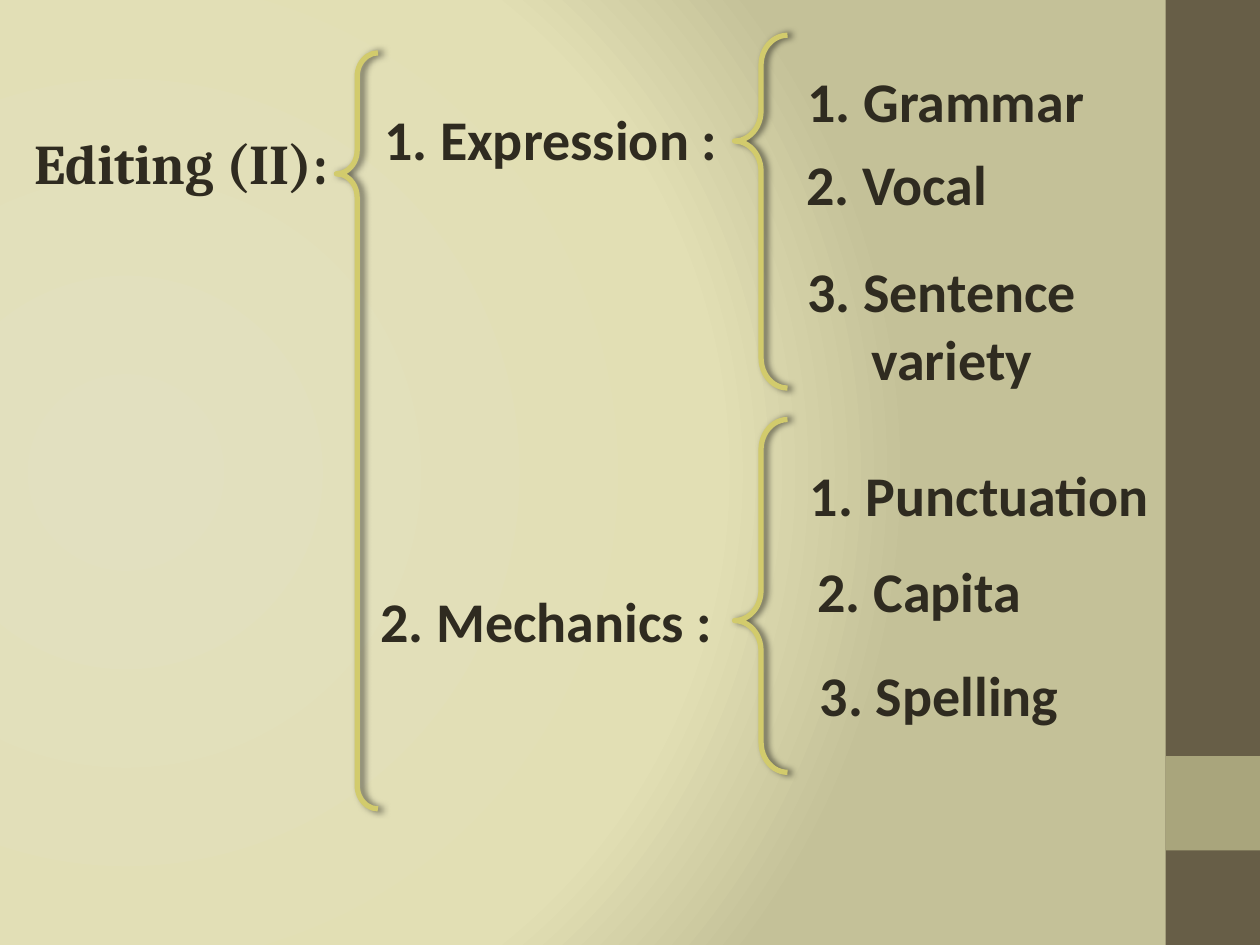
import pptx
import pptx.dml.color
import pptx.enum.shapes
import pptx.enum.text
import pptx.oxml
import pptx.oxml.ns
import pptx.util

RGBColor = pptx.dml.color.RGBColor
INK = RGBColor(0x2F, 0x2B, 0x20)
BRACE = RGBColor(0xD2, 0xCB, 0x6C)
SIDEBAR = RGBColor(0x67, 0x5E, 0x47)
ACCENT = RGBColor(0xA9, 0xA5, 0x7C)
GLOW = ((0, RGBColor(0xE2, 0xE0, 0xC0)),
        (75, RGBColor(0xE2, 0xDF, 0xB4)),
        (100, RGBColor(0xC4, 0xC1, 0x98)))
COLUMNS, ROWS = 40, 30
LINE_ROWS = 2.56  # height of a one-line text box


class Page:
    """The slide and its style; lengths are columns and rows of the grid."""

    def __init__(self, deck):
        self.deck = deck
        self.slide = deck.slides.add_slide(deck.slide_layouts[5])
        self.shapes = self.slide.shapes

    def place(self, left, top, width, height):
        column = self.deck.slide_width / COLUMNS
        row = self.deck.slide_height / ROWS
        return [pptx.util.Emu(round(length)) for length in
                (left * column, top * row, width * column, height * row)]

    def background(self, stops):
        """Fill the background with a round gradient centred at the left."""
        marks = "".join(f'<a:gs pos="{share * 1000}"><a:srgbClr val="{color}"/></a:gs>'
                        for share, color in stops)
        self.slide.background.fill.solid()
        properties = self.slide.background._cSld.bg.bgPr
        solid = properties.find(pptx.oxml.ns.qn("a:solidFill"))
        properties.replace(solid, pptx.oxml.parse_xml(
            f'<a:gradFill {pptx.oxml.ns.nsdecls("a")} rotWithShape="1">'
            f'<a:gsLst>{marks}</a:gsLst><a:path path="circle">'
            '<a:fillToRect l="20000" t="50000" r="100000" b="50000"/>'
            '</a:path></a:gradFill>'))

    def block(self, area, color):
        shape = self.shapes.add_shape(
            pptx.enum.shapes.MSO_SHAPE.RECTANGLE, *self.place(*area))
        shape.shadow.inherit = False
        shape.fill.solid()
        shape.fill.fore_color.rgb = color
        shape.line.fill.background()

    def set_lines(self, box, lines, font):
        frame = box.text_frame
        frame.word_wrap = True
        frame.auto_size = pptx.enum.text.MSO_AUTO_SIZE.NONE
        frame.vertical_anchor = pptx.enum.text.MSO_ANCHOR.TOP
        frame.text = "\n".join(lines)
        for para in frame.paragraphs:
            para.alignment = pptx.enum.text.PP_ALIGN.LEFT
            para.font.name = font
            para.font.size = pptx.util.Pt(32)
            para.font.bold = True
            para.font.color.rgb = INK
        for para in frame.paragraphs[1:]:
            para._p.get_or_add_pPr().set("marL", str(pptx.util.Inches(0.51)))

    def title(self, area, text):
        box = self.shapes.title
        box.left, box.top, box.width, box.height = self.place(*area)
        self.set_lines(box, [text], "Cambria")

    def text(self, left, top, width, *lines):
        area = self.place(left, top, width, LINE_ROWS * len(lines))
        self.set_lines(self.shapes.add_textbox(*area), lines, "Calibri")

    def brace(self, area, point):
        """Draw a left brace whose tip is at the given share of its height."""
        shape = self.shapes.add_shape(
            pptx.enum.shapes.MSO_SHAPE.LEFT_BRACE, *self.place(*area))
        shape.adjustments[0] = 0.57
        shape.adjustments[1] = point
        shape.fill.background()
        shape.line.color.rgb = BRACE
        shape.line.width = pptx.util.Pt(3)
        shape.shadow.inherit = False
        effects = shape._element.spPr.find(pptx.oxml.ns.qn("a:effectLst"))
        effects.append(pptx.oxml.parse_xml(
            f'<a:outerShdw {pptx.oxml.ns.nsdecls("a")} dir="0"'
            f' blurRad="{pptx.util.Pt(4)}" dist="{pptx.util.Pt(2)}" rotWithShape="0">'
            '<a:srgbClr val="000000"><a:alpha val="60000"/></a:srgbClr>'
            '</a:outerShdw>'))


def main():
    deck = pptx.Presentation()
    deck.slide_width = pptx.util.Inches(10)
    deck.slide_height = pptx.util.Inches(7.5)
    page = Page(deck)

    page.background(GLOW)
    page.block((37, 0, 3, ROWS), SIDEBAR)
    page.block((37, 24, 3, 3), ACCENT)

    page.title((0.68, 3.88, 10.4, LINE_ROWS), "Editing (II):")
    page.brace((10.68, 1.68, 1.32, 24), 0.16)

    page.text(11.8, 3.12, 13.84, "1. Expression :")
    page.text(11.68, 18.44, 13.32, "2. Mechanics :")
    for top, point in ((1.12, 0.3), (13.32, 0.57)):
        page.brace((23.32, top, 1.68, 11.2), point)

    page.text(25.24, 1.92, 12.76, "1. Grammar")
    page.text(25.2, 4.56, 10.48, "2. Vocal")
    page.text(25.24, 7.96, 11.08, "3. Sentence", "variety")
    page.text(25.32, 14.44, 13.28, "1. Punctuation")
    page.text(25.56, 17.48, 8.36, "2. Capita")
    page.text(25.64, 20.76, 9.6, "3. Spelling")

    deck.save("out.pptx")


if __name__ == "__main__":
    main()
